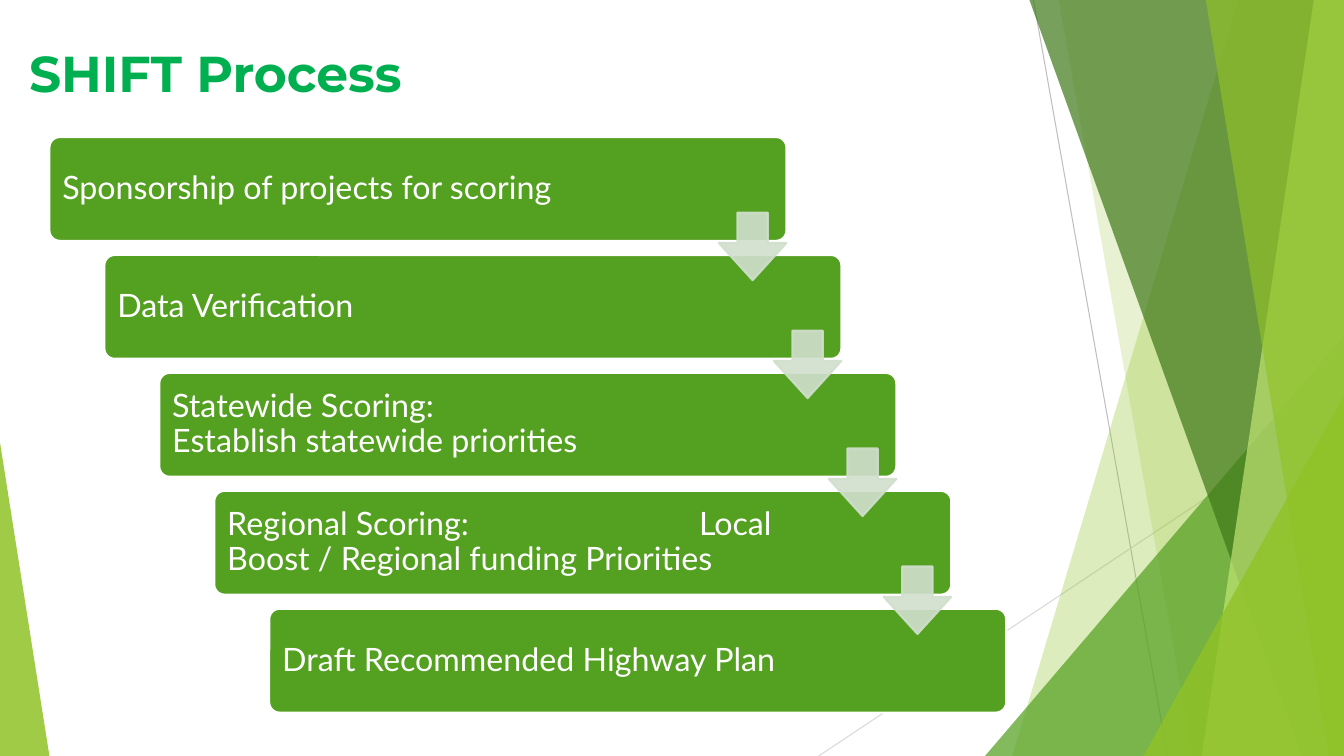
from lxml import etree
from pptx import Presentation
from pptx.dml.color import RGBColor
from pptx.enum.shapes import MSO_CONNECTOR, MSO_SHAPE
from pptx.enum.text import MSO_ANCHOR
from pptx.oxml.ns import qn
from pptx.util import Inches, Pt

LINE = MSO_CONNECTOR.STRAIGHT
WEDGE = MSO_SHAPE.RIGHT_TRIANGLE
TRI = MSO_SHAPE.ISOSCELES_TRIANGLE
ROUND = MSO_SHAPE.ROUNDED_RECTANGLE
DOWN = MSO_SHAPE.DOWN_ARROW
TOP, MIDDLE = MSO_ANCHOR.TOP, MSO_ANCHOR.MIDDLE

WHITE = RGBColor(0xFF, 0xFF, 0xFF)
GREEN = RGBColor(0x54, 0xA0, 0x21)
DARK = RGBColor(0x3F, 0x78, 0x19)
LIME = RGBColor(0x90, 0xC2, 0x26)
PALE = RGBColor(0xC0, 0xE4, 0x74)
MIST = RGBColor(0xD1, 0xDF, 0xCD)
HEAD = RGBColor(0x00, 0xB0, 0x50)
GRAY = RGBColor(0xBF, 0xBF, 0xBF)
SILVER = RGBColor(0xD9, 0xD9, 0xD9)

WIDE, HIGH = 13.33, 7.5


class Deck:
    """Holds the body style and the current slide."""

    font, size, color = "Lato", 23, WHITE

    def __init__(self):
        self.prs = Presentation()
        self.prs.slide_width = Inches(WIDE)
        self.prs.slide_height = Inches(HIGH)
        self.slide = self.prs.slides.add_slide(self.prs.slide_layouts[6])
        self.shapes = self.slide.shapes

    def paint(self, shape, fill, alpha=100, edge=None):
        shape.shadow.inherit = False
        shape.fill.solid()
        shape.fill.fore_color.rgb = fill
        if edge is None:
            shape.line.fill.background()
        else:
            shape.line.color.rgb = edge
            shape.line.width = Pt(1.5)
        if alpha < 100:
            for tint in shape._element.spPr.iter(qn("a:srgbClr")):
                etree.SubElement(tint, qn("a:alpha"), val=str(alpha * 1000))

    def shape(self, kind, box, adj, fill, alpha=100, edge=None):
        shape = self.shapes.add_shape(kind, *map(Inches, box))
        for spot, value in enumerate(adj):
            shape.adjustments[spot] = value
        self.paint(shape, fill, alpha, edge)

    def band(self, top, low, fill, alpha):
        """Full-height band from a slanted left edge to the slide's right."""
        pen = self.shapes.build_freeform(Inches(top), 0)
        rest = [(WIDE, 0), (WIDE, HIGH), (low, HIGH)]
        pen.add_line_segments([(Inches(x), Inches(y)) for x, y in rest])
        self.paint(pen.convert_to_shape(), fill, alpha)

    def line(self, ends, color):
        line = self.shapes.add_connector(LINE, *map(Inches, ends))
        line.line.color.rgb = color
        line.line.width = Pt(0.75)
        etree.SubElement(line._element.spPr, qn("a:effectLst"))

    def text(self, box, rows, anchor=MIDDLE, space=0.9, tab=None,
             font=font, size=size, color=color, bold=False):
        frame = self.shapes.add_textbox(*map(Inches, box)).text_frame
        frame.word_wrap = True
        frame.vertical_anchor = anchor
        frame.margin_left = frame.margin_right = Inches(0.1)
        frame.margin_top = frame.margin_bottom = Inches(0.05)
        para = frame.paragraphs[0]
        para.line_spacing = space
        if tab:
            tabs = etree.SubElement(para._p.get_or_add_pPr(), qn("a:tabLst"))
            etree.SubElement(tabs, qn("a:tab"), pos=str(Inches(tab)), algn="l")
        for spot, row in enumerate(rows):
            if spot:
                para.add_line_break()
            run = para.add_run()
            run.text = row
            run.font.name = font
            run.font.size = Pt(size)
            run.font.color.rgb = color
            run.font.bold = bold


def main():
    deck = Deck()

    # Backdrop of thin lines and see-through green bands
    deck.line((10.25, 0, 11.58, HIGH), GRAY)
    deck.line((WIDE, 4.03, 8.12, HIGH), SILVER)
    deck.band(12.28, 10.04, LIME, 30)
    deck.band(10.5, 11.83, LIME, 20)
    deck.shape(TRI, (9.77, 3.33, 3.56, 4.17), [1], GREEN, 72)
    deck.band(10.21, 12.91, DARK, 70)
    deck.band(13.03, 11.92, PALE, 70)
    deck.band(11.96, 13.18, LIME, 65)
    deck.shape(TRI, (11.34, 3.93, 1.99, 3.57), [1], LIME, 80)
    deck.shape(WEDGE, (0, 4.39, 0.49, 3.11), [], LIME, 85)

    # Title
    deck.text((0.19, 0.37, 9.94, 0.84), ["SHIFT Process"], TOP, 1,
              font="Montserrat", size=36, color=HEAD, bold=True)

    # Staircase of steps
    steps = [
        ["Sponsorship of projects for scoring"],
        ["Data Verification"],
        ["Statewide Scoring:", "Establish statewide priorities"],
        ["Regional Scoring:\tLocal", "Boost / Regional funding Priorities"],
        ["Draft Recommended Highway Plan"],
    ]
    left, top, over, down = 0.49, 1.36, 0.545, 1.17
    for spot, rows in enumerate(steps):
        x, y = left + spot * over, top + spot * down
        deck.shape(ROUND, (x, y, 7.31, 1.03), [0.1], GREEN, edge=WHITE)
        deck.text((x + 0.03, y + 0.03, 6.06, 0.97), rows, tab=4.68)

    # Arrows from each step to the next
    for spot in range(len(steps) - 1):
        x, y = left + 6.64 + spot * over, top + 0.75 + spot * down
        deck.shape(DOWN, (x, y, 0.67, 0.67), [0.45, 0.55], MIST, 90, MIST)

    deck.prs.save("out.pptx")


if __name__ == "__main__":
    main()
